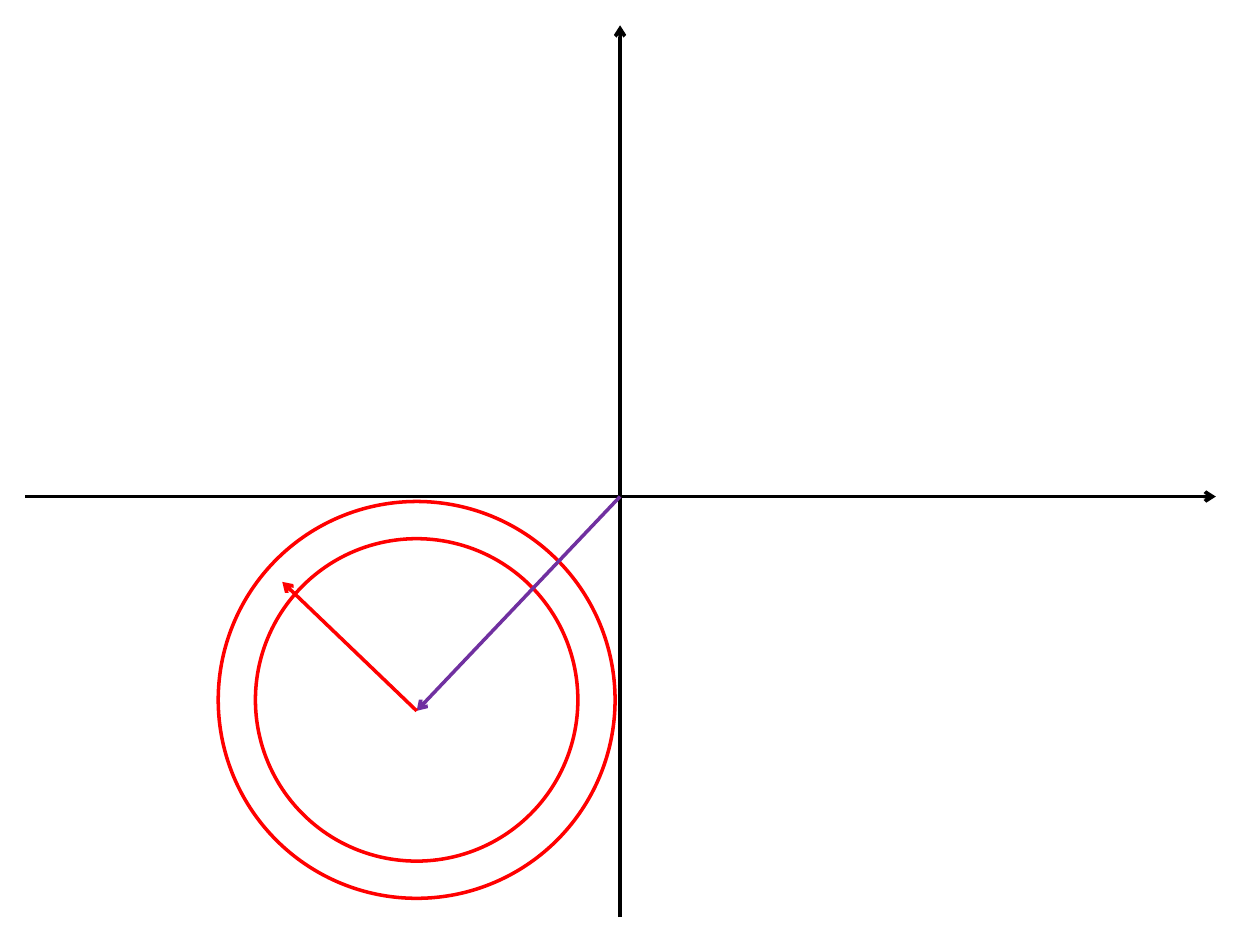
"""Build a slide with two axes, a ring and the vectors that place it."""
from lxml import etree
from pptx import Presentation, util as u
from pptx.dml.color import RGBColor
from pptx.enum import shapes
from pptx.oxml.ns import qn

BLACK, RED, PURPLE = "000000", "FF0000", "7030A0"


def style_line(line, color):
    line.color.rgb = RGBColor.from_string(color)
    line.width = u.Pt(2)


def add_arrow(parent, start, end, color):
    ends = [u.Cm(value) for value in (*start, *end)]
    arrow = parent.add_connector(shapes.MSO_CONNECTOR.STRAIGHT, *ends)
    style_line(arrow.line, color)
    properties = arrow._element.spPr
    etree.SubElement(properties.find(qn("a:ln")), qn("a:tailEnd"), type="arrow")
    etree.SubElement(properties, qn("a:effectLst"))


prs = Presentation()
prs.slide_width, prs.slide_height = u.Cm(25.4), u.Cm(19.05)
slide = prs.slides.add_slide(prs.slide_layouts[6])

origin_x, origin_y = origin = (12.5, 10.01)
axes = slide.shapes.add_group_shape()
add_arrow(axes.shapes, (origin_x, 18.49), (origin_x, 0.51), BLACK)
add_arrow(axes.shapes, (0.51, origin_y), (24.51, origin_y), BLACK)

ring_x, ring_y = 8.4, 14.11
for radius in (4, 3.25):
    circle = slide.shapes.add_shape(
        shapes.MSO_SHAPE.OVAL, u.Cm(ring_x - radius), u.Cm(ring_y - radius),
        u.Cm(2 * radius), u.Cm(2 * radius))
    circle.fill.background()
    circle.shadow.inherit = False
    style_line(circle.line, RED)

vector_tip = (8.4, 14.33)
add_arrow(slide.shapes, origin, vector_tip, PURPLE)
add_arrow(slide.shapes, vector_tip, (5.69, 11.73), RED)

prs.save("out.pptx")
